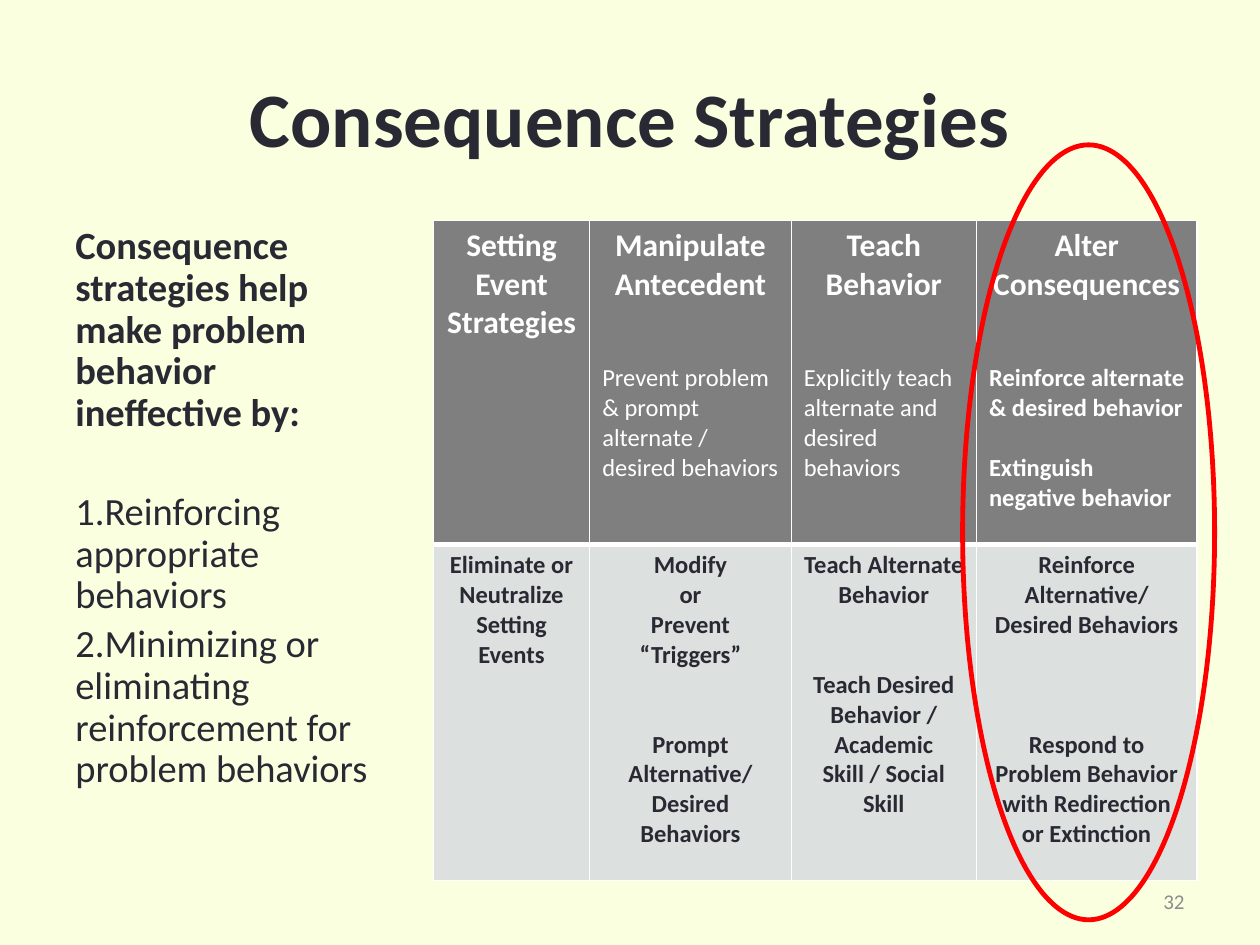
from lxml import etree
from pptx import Presentation
from pptx.dml.color import RGBColor
from pptx.enum.shapes import MSO_SHAPE
from pptx.enum.text import MSO_ANCHOR, PP_ALIGN
from pptx.oxml.ns import qn
from pptx.util import Inches, Pt

LEFT, CENTER, RIGHT = PP_ALIGN.LEFT, PP_ALIGN.CENTER, PP_ALIGN.RIGHT
TOP, MIDDLE = MSO_ANCHOR.TOP, MSO_ANCHOR.MIDDLE
ELLIPSE = MSO_SHAPE.OVAL
TITLE_ONLY = 5

SLIDE_WIDTH, SLIDE_HEIGHT = Inches(10), Inches(7.5)
GRID_COLUMN, GRID_ROW = SLIDE_WIDTH / 10, SLIDE_HEIGHT / 7.5
FONT = "Calibri"
INK, WHITE, CREAM = "292934", "FFFFFF", "FAFFE0"
HEADER_FILL, DETAIL_FILL = "7F7F7F", "DCE0DE"
HIGHLIGHT, MUTED = "FF0000", "8D8D8F"
CELL_LINE = 17.1

COLUMN_WIDTHS = [1.24, 1.6, 1.47, 1.75]
ROW_HEIGHTS = [2.57, 2.67]
HEADERS = [
    ("Setting Event Strategies", []),
    ("Manipulate Antecedent", ["Prevent problem & prompt alternate / desired behaviors"]),
    ("Teach Behavior", ["Explicitly teach alternate and desired behaviors"]),
    ("Alter Consequences",
     ["Reinforce alternate & desired behavior", "Extinguish negative behavior"]),
]
DETAILS = [
    [(0, "Eliminate or Neutralize Setting Events")],
    [(0, "Modify"), (0, "or"), (0, "Prevent"), (0, "“Triggers”"),
     (2, "Prompt Alternative/"), (0, "Desired Behaviors")],
    [(0, "Teach Alternate Behavior"),
     (2, "Teach Desired Behavior / Academic Skill / Social Skill")],
    [(0, "Reinforce Alternative/"), (0, "Desired Behaviors"),
     (3, "Respond to Problem Behavior with Redirection or Extinction")],
]


def color(hex_text):
    """Turn a hex string into a colour."""
    return RGBColor.from_string(hex_text)


def place(left, top, width, height):
    """Turn grid columns and rows into slide lengths."""
    return (round(left * GRID_COLUMN), round(top * GRID_ROW),
            round(width * GRID_COLUMN), round(height * GRID_ROW))


def write(frame, text, size=14, ink=INK, bold=False, align=LEFT,
          before=0, spacing=1.0, numbered=False):
    """Add one formatted paragraph to a text frame."""
    paragraph = frame.paragraphs[0] if not frame.text else frame.add_paragraph()
    paragraph.alignment = align
    paragraph.space_before = Pt(before)
    paragraph.line_spacing = spacing
    run = paragraph.add_run()
    run.text = text
    run.font.name, run.font.size, run.font.bold = FONT, Pt(size), bold
    run.font.color.rgb = color(ink)
    if numbered:
        properties = paragraph._p.get_or_add_pPr()
        properties.set("marL", "0")
        properties.set("indent", "0")
        etree.SubElement(properties, qn("a:buAutoNum"), type="arabicPeriod")


def add_frame(slide, box, anchor=TOP):
    """Add a wrapping text box and return its text frame."""
    frame = slide.shapes.add_textbox(*place(*box)).text_frame
    frame.word_wrap = True
    frame.vertical_anchor = anchor
    return frame


def add_title(slide, box):
    """Place and format the title."""
    title = slide.shapes.title
    title.left, title.top, title.width, title.height = place(*box)
    title.text_frame.vertical_anchor = MIDDLE
    write(title.text_frame, "Consequence Strategies", size=44, bold=True, align=CENTER)


def add_explanation(slide, box):
    """Write the lead sentence and the numbered ways."""
    frame = add_frame(slide, box)
    write(frame, "Consequence strategies help make problem behavior ineffective by:",
          size=22, bold=True, before=4.4, spacing=0.9)
    ways = ["Reinforcing appropriate behaviors",
            "Minimizing or eliminating reinforcement for problem behaviors"]
    for way, before in zip(ways, [33, 4.4]):
        write(frame, way, size=22, before=before, spacing=0.9, numbered=True)


def style_cell(cell, fill, top_width, bottom_width):
    """Give a cell white borders and a solid fill."""
    properties = cell._tc.get_or_add_tcPr()
    for side, width in zip("LRTB", [1, 1, top_width, bottom_width]):
        border = etree.SubElement(properties, qn(f"a:ln{side}"), w=str(Pt(width)))
        solid = etree.SubElement(border, qn("a:solidFill"))
        etree.SubElement(solid, qn("a:srgbClr"), val=WHITE)
    cell.fill.solid()
    cell.fill.fore_color.rgb = color(fill)


def add_strategy_table(slide, box):
    """Build the table of strategies, with a header and a detail row."""
    table = slide.shapes.add_table(len(ROW_HEIGHTS), len(COLUMN_WIDTHS), *place(*box)).table
    table.first_row = table.horz_banding = False
    for column, width in zip(table.columns, COLUMN_WIDTHS):
        column.width = round(box[2] * GRID_COLUMN * width / sum(COLUMN_WIDTHS))
    for row, height in zip(table.rows, ROW_HEIGHTS):
        row.height = round(box[3] * GRID_ROW * height / sum(ROW_HEIGHTS))
    for index, ((heading, aims), details) in enumerate(zip(HEADERS, DETAILS)):
        header, detail = table.cell(0, index), table.cell(1, index)
        style_cell(header, HEADER_FILL, 1, 3)
        style_cell(detail, DETAIL_FILL, 3, 1)
        write(header.text_frame, heading, size=18, ink=WHITE, bold=True, align=CENTER)
        highlighted = index == len(HEADERS) - 1
        for aim, gap in zip(aims, [2, 1]):
            write(header.text_frame, aim, ink=WHITE, bold=highlighted,
                  before=gap * CELL_LINE)
        for gap, line in details:
            write(detail.text_frame, line, bold=True, align=CENTER, before=gap * CELL_LINE)


def add_highlight(slide, box):
    """Ring the column in focus."""
    ring = slide.shapes.add_shape(ELLIPSE, *place(*box))
    ring.shadow.inherit = False
    ring.fill.background()
    ring.line.color.rgb = color(HIGHLIGHT)
    ring.line.width = Pt(2.75)


def add_page_number(slide, box):
    """Write the page number."""
    write(add_frame(slide, box, MIDDLE), "32", size=12, ink=MUTED, align=RIGHT)


def main():
    """Build and save the slide."""
    deck = Presentation()
    deck.slide_width, deck.slide_height = SLIDE_WIDTH, SLIDE_HEIGHT
    slide = deck.slides.add_slide(deck.slide_layouts[TITLE_ONLY])
    slide.background.fill.solid()
    slide.background.fill.fore_color.rgb = color(CREAM)
    add_title(slide, (0.5, 0.3, 9, 1.25))
    add_explanation(slide, (0.5, 1.75, 2.62, 4.95))
    add_strategy_table(slide, (3.44, 1.75, 6.06, 5.24))
    add_highlight(slide, (7.64, 1.15, 2, 6.15))
    add_page_number(slide, (7.17, 6.95, 2.33, 0.4))
    deck.save("out.pptx")


if __name__ == "__main__":
    main()
